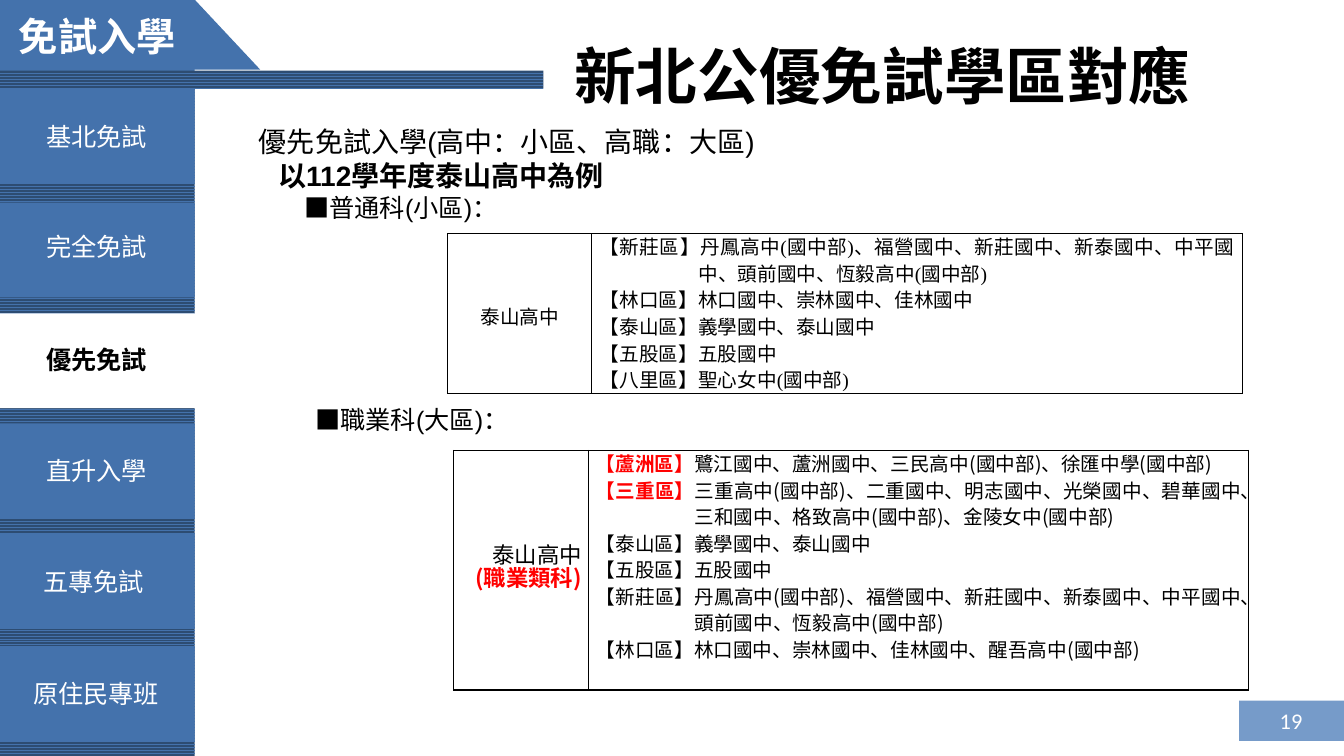
from lxml import etree
from pptx import Presentation
from pptx.dml.color import RGBColor
from pptx.enum.dml import MSO_PATTERN
from pptx.enum.shapes import MSO_SHAPE
from pptx.enum.text import MSO_ANCHOR as ANCHOR, PP_ALIGN as ALIGN
from pptx.oxml.ns import qn
from pptx.util import Pt

PX = 9144
BLUE, NAVY, PALE = "4472AC", "2D4C72", "769BC9"
WHITE, BLACK, RED = "FFFFFF", "000000", "FF0000"
rgb = RGBColor.from_string


def write(tf, paras, font, size, color=BLACK, bold=False):
    for i, (runs, fmt) in enumerate(paras):
        p = tf.paragraphs[0] if i == 0 else tf.add_paragraph()
        fmt = dict(fmt)
        pPr = p._p.get_or_add_pPr()
        for key in ("marL", "indent"):
            pPr.set(key, str(fmt.pop(key, 0) * PX))
        for key, value in fmt.items():
            setattr(p, key, value)
        for run in [runs] if isinstance(runs, str) else runs:
            text, look = (run, {}) if isinstance(run, str) else run
            r = p.add_run()
            r.text = text
            f = {"name": font, "size": Pt(size), "bold": bold, "color": color, **look}
            r.font.color.rgb = rgb(f.pop("color"))
            for key, value in f.items():
                setattr(r.font, key, value)


def box(x, y, w, h, paras, *style, wrap=True, inset=None, anchor=ANCHOR.TOP):
    tf = s.shapes.add_textbox(x * PX, y * PX, w * PX, h * PX).text_frame
    tf.word_wrap = wrap
    tf.vertical_anchor = anchor
    if inset is not None:
        tf.margin_left = tf.margin_right = tf.margin_top = tf.margin_bottom = inset
    write(tf, paras, *style)


prs = Presentation()
prs.slide_width, prs.slide_height = 1333 * PX, 750 * PX
s = prs.slides.add_slide(prs.slide_layouts[6])
centred = {"alignment": ALIGN.CENTER}

tabs = [
    ("基北免試", 88, 36, 115),
    ("完全免試", 201, 36, 225),
    ("優先免試", 311, 36, 337),
    ("直升入學", 420, 36, 447),
    ("五專免試", 530, 33, 557),
    ("原住民專班", 641, 23, 668),
]
current = "優先免試"

blocks = [
    (MSO_SHAPE.ISOSCELES_TRIANGLE, 127, -1, 131, 70, BLUE),
    (MSO_SHAPE.RECTANGLE, 0, -1, 193, 74, BLUE),
    (MSO_SHAPE.RECTANGLE, 0, 86, 193, 664, None),
    (MSO_SHAPE.RECTANGLE, 1229, 695, 104, 40, PALE),
    (MSO_SHAPE.RECTANGLE, 0, 70, 539, 18, None),
]
for name, top, _, _ in tabs:
    width, color = (211, WHITE) if name == current else (193, BLUE)
    blocks.append((MSO_SHAPE.RECTANGLE, 0, top, width, 94, color))

for kind, x, y, w, h, color in blocks:
    sp = s.shapes.add_shape(kind, x * PX, y * PX, w * PX, h * PX)
    sp.shadow.inherit = False
    sp.line.fill.background()
    if color:
        sp.fill.solid()
        sp.fill.fore_color.rgb = rgb(color)
    else:
        sp.fill.patterned()
        sp.fill.pattern = MSO_PATTERN.ZIG_ZAG
        sp.fill.fore_color.rgb = rgb(BLUE)
        sp.fill.back_color.rgb = rgb(NAVY)

box(0, -1, 193, 74, [("免試入學", centred)], "Calibri", 28, WHITE, True, anchor=ANCHOR.MIDDLE)
box(1256, 695, 49, 40, [("19", centred)], "Calibri", 16, WHITE, anchor=ANCHOR.MIDDLE)
for name, _, x, y in tabs:
    active = name == current
    box(x, y, 146 if len(name) > 4 else 121, 40, [(name, {})],
        "Calibri", 18, BLACK if active else WHITE, active, wrap=False)

box(518, 38, 715, 74, [("新北公優免試學區對應", centred)], "Calibri", 44, BLACK, True, inset=0)

small = {"size": Pt(18)}
box(247, 119, 867, 320, [
    ("優先免試入學(高中：小區、高職：大區)", {}),
    ([("以112學年度泰山高中為例", {"bold": True})], {"marL": 19}),
    ([("■普通科(小區)：", small)], {"marL": 45}),
    ([("■職業科(大區)：", small)], {"marL": 56, "space_before": Pt(130)}),
], "Arial", 20)

strong = {"color": RED, "bold": True}
near, far = [
    {"alignment": ALIGN.JUSTIFY, "line_spacing": Pt(19), "marL": n, "indent": -n}
    for n in (83, 98)
]
xinzhuang = "【新莊區】丹鳳高中(國中部)、福營國中、新莊國中、新泰國中、中平國中、頭前國中、恆毅高中(國中部)"
taishan = "【泰山區】義學國中、泰山國中"
wugu = "【五股區】五股國中"
right = {"alignment": ALIGN.RIGHT, "line_spacing": Pt(16)}

tables = [
    (444, 232, (143, 645), 158, 8, "Times New Roman", 14,
     [("泰山高中", {**centred, "line_spacing": Pt(24)})],
     [(xinzhuang, far),
      ("【林口區】林口國中、崇林國中、佳林國中", near),
      (taishan, near),
      (wugu, near),
      ("【八里區】聖心女中(國中部)", near)]),
    (450, 447, (134, 654), 228, 7, "Noto Sans CJK SC", 16,
     [("泰山高中", right), ([("(職業類科)", strong)], right)],
     [([("【蘆洲區】", strong), "鷺江國中、蘆洲國中、三民高中(國中部)、徐匯中學(國中部)"], near),
      ([("【三重區】", strong),
        "三重高中(國中部)、二重國中、明志國中、光榮國中、碧華國中、三和國中、格致高中(國中部)、金陵女中(國中部)"], far),
      (taishan, near),
      (wugu, near),
      (xinzhuang, far),
      ("【林口區】林口國中、崇林國中、佳林國中、醒吾高中(國中部)", near)]),
]
for x, y, widths, h, pad, font, size, school, districts in tables:
    tbl = s.shapes.add_table(1, 2, x * PX, y * PX, sum(widths) * PX, h * PX).table
    tbl.first_row = tbl.horz_banding = False
    for i, (paras, pt) in enumerate([(school, size), (districts, 14)]):
        tbl.columns[i].width = widths[i] * PX
        cell = tbl.cell(0, i)
        cell.margin_left = cell.margin_right = pad * PX
        cell.margin_top = cell.margin_bottom = 0
        cell.vertical_anchor = ANCHOR.TOP if i else ANCHOR.MIDDLE
        write(cell.text_frame, paras, font, pt)
        tcPr = cell._tc.get_or_add_tcPr()
        for side in ("lnL", "lnR", "lnT", "lnB"):
            ln = etree.SubElement(tcPr, qn("a:" + side), w=str(Pt(1)))
            fill = etree.SubElement(ln, qn("a:solidFill"))
            etree.SubElement(fill, qn("a:srgbClr"), val=BLACK)
        cell.fill.background()

prs.save("out.pptx")
